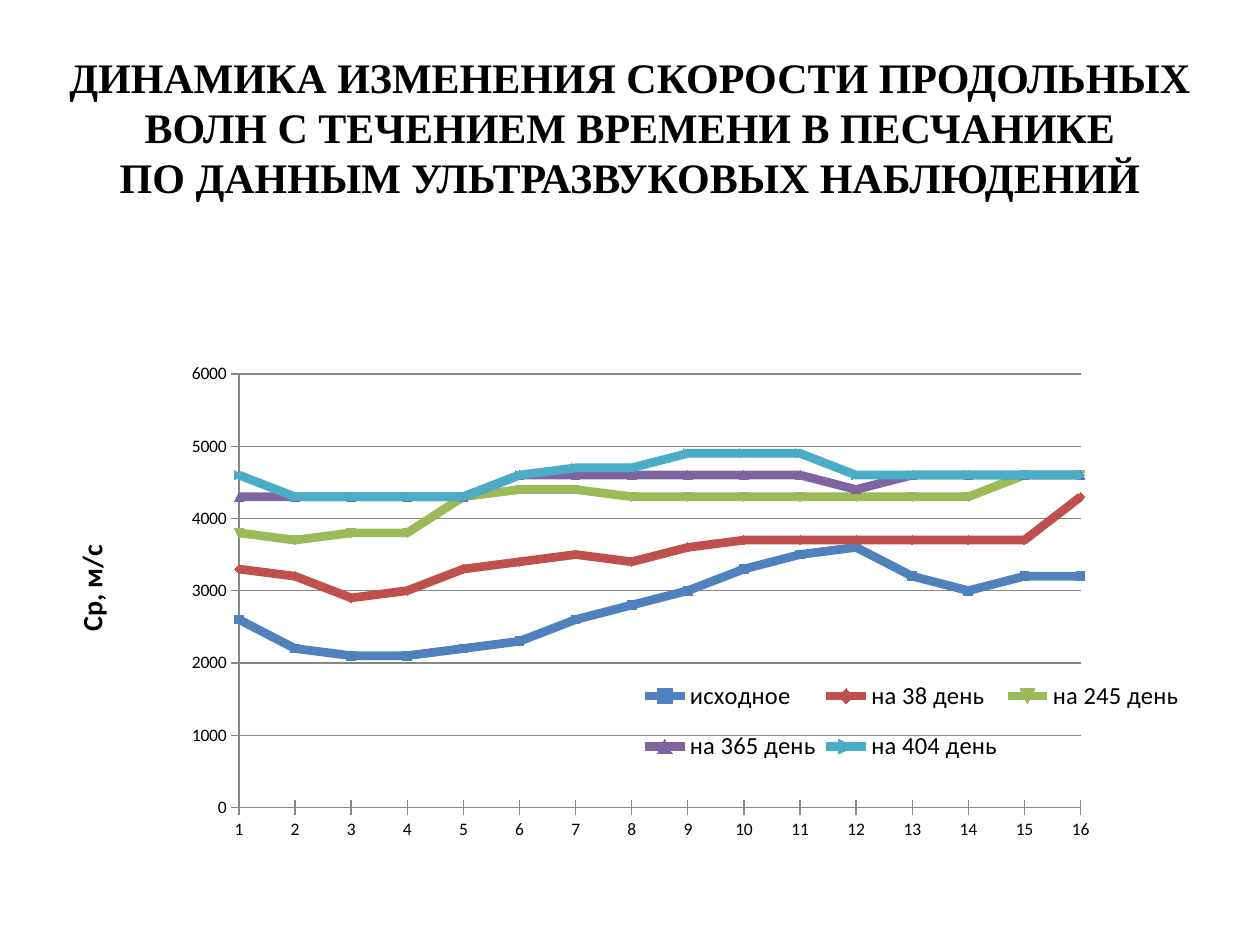
from lxml import etree
from pptx import Presentation, util as u
from pptx.chart.data import CategoryChartData
from pptx.dml.color import RGBColor
from pptx.enum import chart as charts, text
from pptx.oxml.ns import qn

# Content
TITLE = ("ДИНАМИКА ИЗМЕНЕНИЯ СКОРОСТИ ПРОДОЛЬНЫХ ВОЛН С ТЕЧЕНИЕМ ВРЕМЕНИ "
         "В ПЕСЧАНИКЕ\vПО ДАННЫМ УЛЬТРАЗВУКОВЫХ НАБЛЮДЕНИЙ")
AXIS_TITLE = "Ср, м/с"
POINTS = [str(number) for number in range(1, 17)]
VELOCITIES = {
    "исходное": [2600, 2200, 2100, 2100, 2200, 2300, 2600, 2800,
                 3000, 3300, 3500, 3600, 3200, 3000, 3200, 3200],
    "на 38 день": [3300, 3200, 2900, 3000, 3300, 3400, 3500, 3400,
                   3600, 3700, 3700, 3700, 3700, 3700, 3700, 4300],
    "на 245 день": [3800, 3700, 3800, 3800, 4300, 4400, 4400, 4300,
                    4300, 4300, 4300, 4300, 4300, 4300, 4600, 4600],
    "на 365 день": [4300, 4300, 4300, 4300, 4300, 4600, 4600, 4600,
                    4600, 4600, 4600, 4400, 4600, 4600, 4600, 4600],
    "на 404 день": [4600, 4300, 4300, 4300, 4300, 4600, 4700, 4700,
                    4900, 4900, 4900, 4600, 4600, 4600, 4600, 4600],
}

THEME = {
    "heading_font": "Times New Roman", "chart_font": "Calibri",
    "heading_size": 24, "tick_size": 10, "axis_title_size": 16, "legend_size": 14,
    "ink": "000000", "rule": "878787", "rule_width": 0.75, "series_width": 5,
    "series": ["4F81BD", "C0504D", "9BBB59", "8064A2", "4BACC6"],
}

# Left, top, width, height: slide parts in inches, chart parts as shares of the chart
TITLE_BOX = (0.12, 0.23, 9.76, 1.55)
CHART_BOX = (0.35, 2.02, 9.37, 5.04)
PLOT_SHARE = {"x": 0.165, "y": 0.188, "w": 0.713, "h": 0.683}
LEGEND_SHARE = {"x": 0.5, "y": 0.64, "w": 0.47, "h": 0.19}
AXIS_TITLE_SHARE = {"x": 0.02, "y": 0.45}


def color(name):
    return RGBColor.from_string(THEME[name])


def style_font(font, family, size, bold=False):
    font.name = THEME[family]
    font.size = u.Pt(THEME[size])
    font.bold = bold
    font.color.rgb = color("ink")


def place(element, shares, after=None, inner=False):
    """Give a chart part a manual layout, after the named child or first of all."""
    for old in element.findall(qn("c:layout")):
        element.remove(old)
    layout = etree.Element(qn("c:layout"))
    manual = etree.SubElement(layout, qn("c:manualLayout"))
    settings = [("layoutTarget", "inner")] if inner else []
    settings += [("xMode", "edge"), ("yMode", "edge"), *shares.items()]
    for tag, value in settings:
        etree.SubElement(manual, qn("c:" + tag)).set("val", str(value))
    if after:
        element.find(qn(after)).addnext(layout)
    else:
        element.insert(0, layout)


def add_title(slide):
    shape = slide.shapes.add_textbox(*map(u.Inches, TITLE_BOX))
    frame = shape.text_frame
    frame.word_wrap = True
    frame.vertical_anchor = text.MSO_ANCHOR.MIDDLE
    frame.text = TITLE
    paragraph = frame.paragraphs[0]
    paragraph.alignment = text.PP_ALIGN.CENTER
    for run in paragraph.runs:
        style_font(run.font, "heading_font", "heading_size", bold=True)


def style_line(line, rgb, width):
    line.color.rgb = rgb
    line.width = u.Pt(width)


def style_axes(chart):
    value_axis, category_axis = chart.value_axis, chart.category_axis
    value_axis.minimum_scale, value_axis.maximum_scale = 0, 6000
    value_axis.major_unit = 1000
    value_axis.has_major_gridlines = True
    value_axis.major_tick_mark = charts.XL_TICK_MARK.OUTSIDE
    category_axis.major_tick_mark = charts.XL_TICK_MARK.CROSS
    for line in (value_axis.format.line, category_axis.format.line,
                 value_axis.major_gridlines.format.line):
        style_line(line, color("rule"), THEME["rule_width"])

    # Lines start on the value axis itself
    element = value_axis._element
    crossing = element.find(qn("c:crossBetween"))
    if crossing is None:
        crossing = etree.Element(qn("c:crossBetween"))
        element.find(qn("c:crosses")).addnext(crossing)
    crossing.set("val", "midCat")

    title = value_axis.axis_title
    title.text_frame.text = AXIS_TITLE
    run = title.text_frame.paragraphs[0].runs[0]
    style_font(run.font, "chart_font", "axis_title_size", bold=True)
    place(title._element, AXIS_TITLE_SHARE, after="c:tx")


def add_velocity_chart(slide):
    data = CategoryChartData()
    data.categories = POINTS
    for name, values in VELOCITIES.items():
        data.add_series(name, values)
    chart = slide.shapes.add_chart(charts.XL_CHART_TYPE.LINE_MARKERS,
                                   *map(u.Inches, CHART_BOX), data).chart
    chart.has_title = False
    style_font(chart.font, "chart_font", "tick_size")
    style_axes(chart)
    place(chart._chartSpace.chart.plotArea, PLOT_SHARE, inner=True)

    # Series
    chart.plots[0].vary_by_categories = False
    for series, code in zip(chart.plots[0].series, THEME["series"]):
        rgb = RGBColor.from_string(code)
        series.smooth = False
        style_line(series.format.line, rgb, THEME["series_width"])
        series.marker.format.fill.solid()
        series.marker.format.fill.fore_color.rgb = rgb
        series.marker.format.line.color.rgb = rgb

    # Legend over the lower right of the plot
    chart.has_legend = True
    chart.legend.position = charts.XL_LEGEND_POSITION.RIGHT
    chart.legend.include_in_layout = False
    style_font(chart.legend.font, "chart_font", "legend_size")
    place(chart.legend._element, LEGEND_SHARE, after="c:legendPos")


def main():
    presentation = Presentation()
    presentation.slide_width, presentation.slide_height = u.Inches(10), u.Inches(7.5)
    slide = presentation.slides.add_slide(presentation.slide_layouts[6])
    add_title(slide)
    add_velocity_chart(slide)
    presentation.save("out.pptx")


if __name__ == "__main__":
    main()
